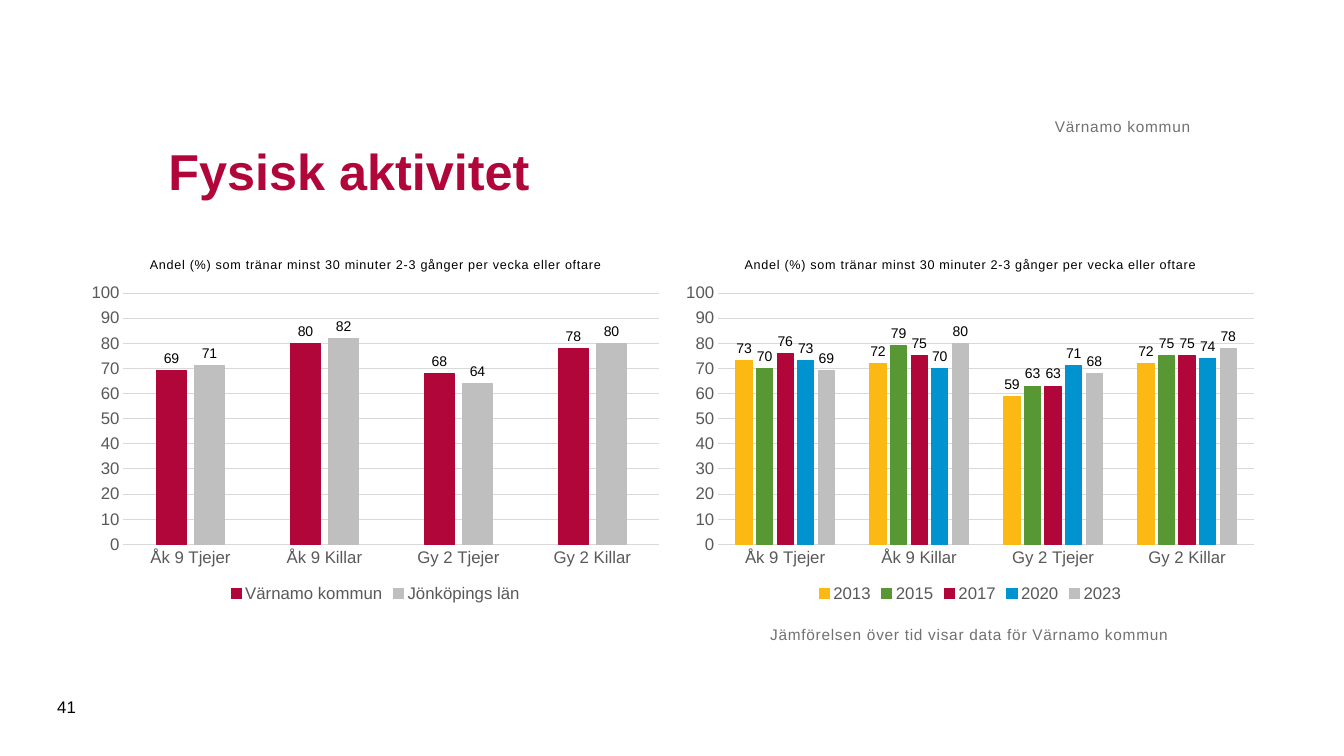
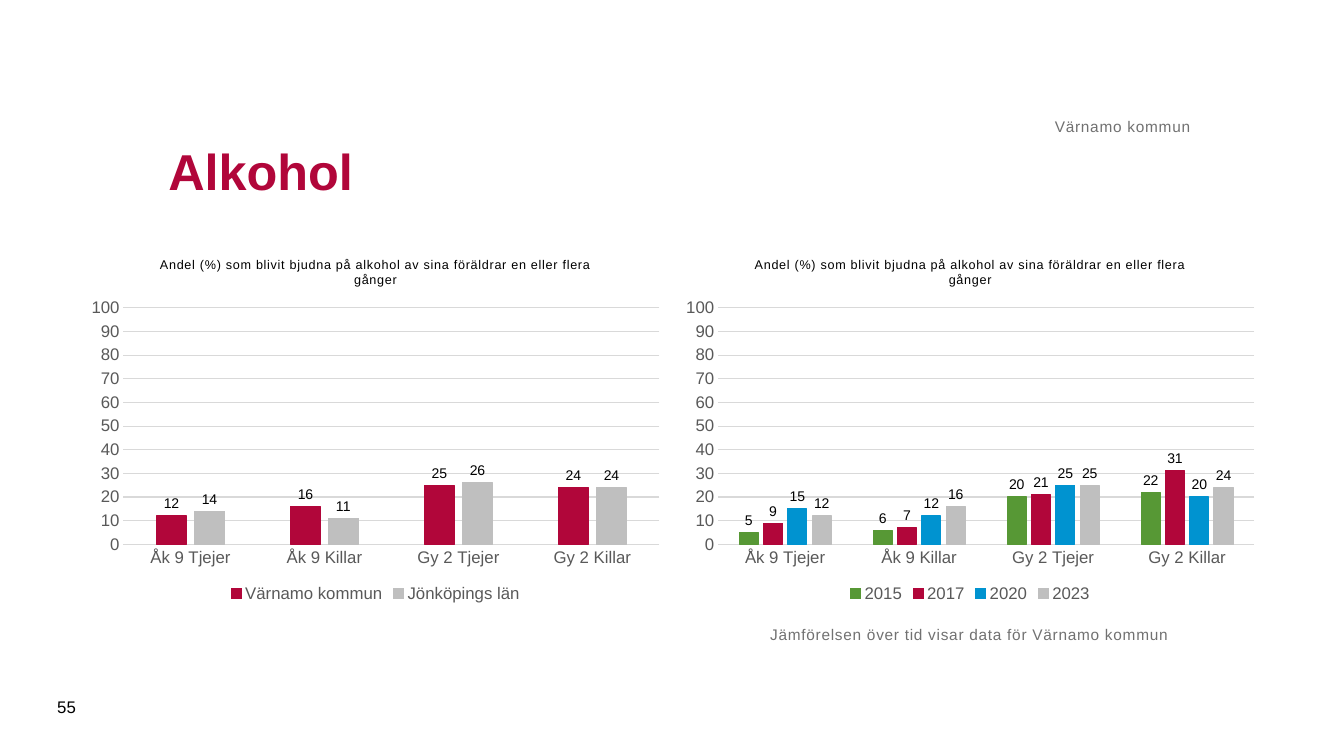
import dataclasses

import pptx
import pptx.chart.data
import pptx.dml.color
import pptx.enum.chart
import pptx.enum.text
import pptx.util

Pt = pptx.util.Pt
RGB = pptx.dml.color.RGBColor.from_string
ALIGN = pptx.enum.text.PP_ALIGN
ANCHOR = pptx.enum.text.MSO_ANCHOR


@dataclasses.dataclass(frozen=True)
class Theme:
    font: str = "Arial"
    red: str = "B1063A"
    silver: str = "BFBFBF"
    yellow: str = "FDB913"
    green: str = "579835"
    blue: str = "0093D0"
    black: str = "000000"
    note: str = "717171"
    axis: str = "595959"
    grid: str = "D9D9D9"
    title_size: int = 36
    axis_size: int = 12
    note_size: int = 11
    label_size: int = 10
    chart_title_size: int = 9
    hairline: float = 0.75
    tracking: int = 50  # hundredths of a point


THEME = Theme()
MUNICIPALITY = "Värnamo kommun"
CATEGORIES = ["Åk 9 Tjejer", "Åk 9 Killar", "Gy 2 Tjejer", "Gy 2 Killar"]
COLORS = {
    MUNICIPALITY: THEME.red,
    "Jönköpings län": THEME.silver,
    "2013": THEME.yellow,
    "2015": THEME.green,
    "2017": THEME.red,
    "2020": THEME.blue,
    "2023": THEME.silver,
}
NUMBER_FORMAT = "#,##0;#,##0"
CHART_LEFTS = (56.9, 481.7)


class Deck:
    def __init__(self, theme):
        self.theme = theme
        self.prs = pptx.Presentation()
        self.prs.slide_width, self.prs.slide_height = Pt(960), Pt(540)
        self.s = None

    def add_slide(self):
        self.s = self.prs.slides.add_slide(self.prs.slide_layouts[5])

    def style(self, font, size, color, bold=False):
        font.name, font.size, font.bold = self.theme.font, Pt(size), bold
        font.color.rgb = RGB(color)

    def track(self, p):
        """Widen the letter spacing of every run in the paragraph."""
        for r in p.runs:
            r._r.get_or_add_rPr().set("spc", str(self.theme.tracking))

    def title(self, text):
        sp = self.s.shapes.title
        sp.left, sp.top, sp.width, sp.height = Pt(113), Pt(70.6), Pt(737.3), Pt(102.2)
        tf = sp.text_frame
        tf.text = text
        tf.word_wrap = True
        tf.auto_size = pptx.enum.text.MSO_AUTO_SIZE.NONE
        tf.vertical_anchor = ANCHOR.MIDDLE
        p = tf.paragraphs[0]
        p.alignment = ALIGN.LEFT
        self.style(p.font, self.theme.title_size, self.theme.red, bold=True)

    def text(self, text, box, size, color, anchor=ANCHOR.TOP, align=ALIGN.LEFT):
        tf = self.s.shapes.add_textbox(*map(Pt, box)).text_frame
        tf.text = text
        tf.word_wrap = True
        tf.vertical_anchor = anchor
        p = tf.paragraphs[0]
        p.alignment = align
        self.style(p.font, size, color)
        return tf

    def note(self, text, box, **placement):
        """Add grey, letter-spaced text without insets."""
        tf = self.text(text, box, self.theme.note_size, self.theme.note, **placement)
        tf.margin_left = tf.margin_top = tf.margin_right = tf.margin_bottom = 0
        self.track(tf.paragraphs[0])

    def page_number(self, number):
        self.text(str(number), (33.8, 490.3, 41, 28.8), self.theme.axis_size,
                  self.theme.black, anchor=ANCHOR.MIDDLE)

    def chart(self, left, title, series):
        data = pptx.chart.data.CategoryChartData(number_format=NUMBER_FORMAT)
        data.categories = CATEGORIES
        for name, values in series.items():
            data.add_series(name, values)
        chart = self.s.shapes.add_chart(
            pptx.enum.chart.XL_CHART_TYPE.COLUMN_CLUSTERED,
            Pt(left), Pt(172.8), Pt(422.6), Pt(260.6), data).chart
        self.style(chart.font, self.theme.label_size, self.theme.black)

        tf = chart.chart_title.text_frame
        tf.text = title
        self.style(tf.paragraphs[0].font, self.theme.chart_title_size, self.theme.black)
        self.track(tf.paragraphs[0])
        chart.chart_title.include_in_layout = False

        chart.has_legend = True
        chart.legend.position = pptx.enum.chart.XL_LEGEND_POSITION.BOTTOM
        chart.legend.include_in_layout = False
        self.style(chart.legend.font, self.theme.axis_size, self.theme.axis)

        self.axes(chart)
        self.columns(chart.plots[0])

    def axes(self, chart):
        for axis in (chart.category_axis, chart.value_axis):
            axis.major_tick_mark = axis.minor_tick_mark = pptx.enum.chart.XL_TICK_MARK.NONE
            self.style(axis.tick_labels.font, self.theme.axis_size, self.theme.axis)
        values = chart.value_axis
        values.minimum_scale, values.maximum_scale, values.major_unit = 0, 100, 10
        values.tick_labels.number_format = NUMBER_FORMAT
        values.tick_labels.number_format_is_linked = False
        values.format.line.fill.background()
        values.has_major_gridlines = True
        for item in (chart.category_axis, values.major_gridlines):
            self.line(item.format.line, self.theme.grid)

    def columns(self, plot):
        plot.gap_width, plot.overlap = 219, -27
        plot.vary_by_categories = False
        for series in plot.series:
            color = COLORS[series.name]
            series.format.fill.solid()
            series.format.fill.fore_color.rgb = RGB(color)
            self.line(series.format.line, color)
            labels = series.data_labels
            labels.show_value = True
            labels.position = pptx.enum.chart.XL_LABEL_POSITION.OUTSIDE_END
            labels.number_format = NUMBER_FORMAT
            labels.number_format_is_linked = False
            self.style(labels.font, self.theme.label_size, self.theme.black)

    def line(self, line, color):
        line.color.rgb = RGB(color)
        line.width = Pt(self.theme.hairline)

    def survey_slide(self, title, number, question, county, years):
        """Compare the municipality with the county, and with its earlier years."""
        self.add_slide()
        self.title(title)
        comparison = {MUNICIPALITY: years["2023"], "Jönköpings län": county}
        for left, series in zip(CHART_LEFTS, (comparison, years)):
            self.chart(left, question, series)
        self.note(f"Jämförelsen över tid visar data för {MUNICIPALITY}",
                  (550.1, 446.4, 382.3, 67.7))
        self.note(MUNICIPALITY, (113, 44.6, 737.3, 52.6),
                  anchor=ANCHOR.BOTTOM, align=ALIGN.RIGHT)
        self.page_number(number)


def main():
    deck = Deck(THEME)
    deck.survey_slide(
        "Fysisk aktivitet", 41,
        "Andel (%) som tränar minst 30 minuter 2-3 gånger per vecka eller oftare",
        county=(71, 82, 64, 80),
        years={
            "2013": (73, 72, 59, 72),
            "2015": (70, 79, 63, 75),
            "2017": (76, 75, 63, 75),
            "2020": (73, 70, 71, 74),
            "2023": (69, 80, 68, 78),
        })
    deck.survey_slide(
        "Alkohol", 55,
        "Andel (%) som blivit bjudna på alkohol av sina föräldrar en eller flera gånger",
        county=(14, 11, 26, 24),
        years={
            "2015": (5, 6, 20, 22),
            "2017": (9, 7, 21, 31),
            "2020": (15, 12, 25, 20),
            "2023": (12, 16, 25, 24),
        })
    deck.prs.save("out.pptx")


if __name__ == "__main__":
    main()
